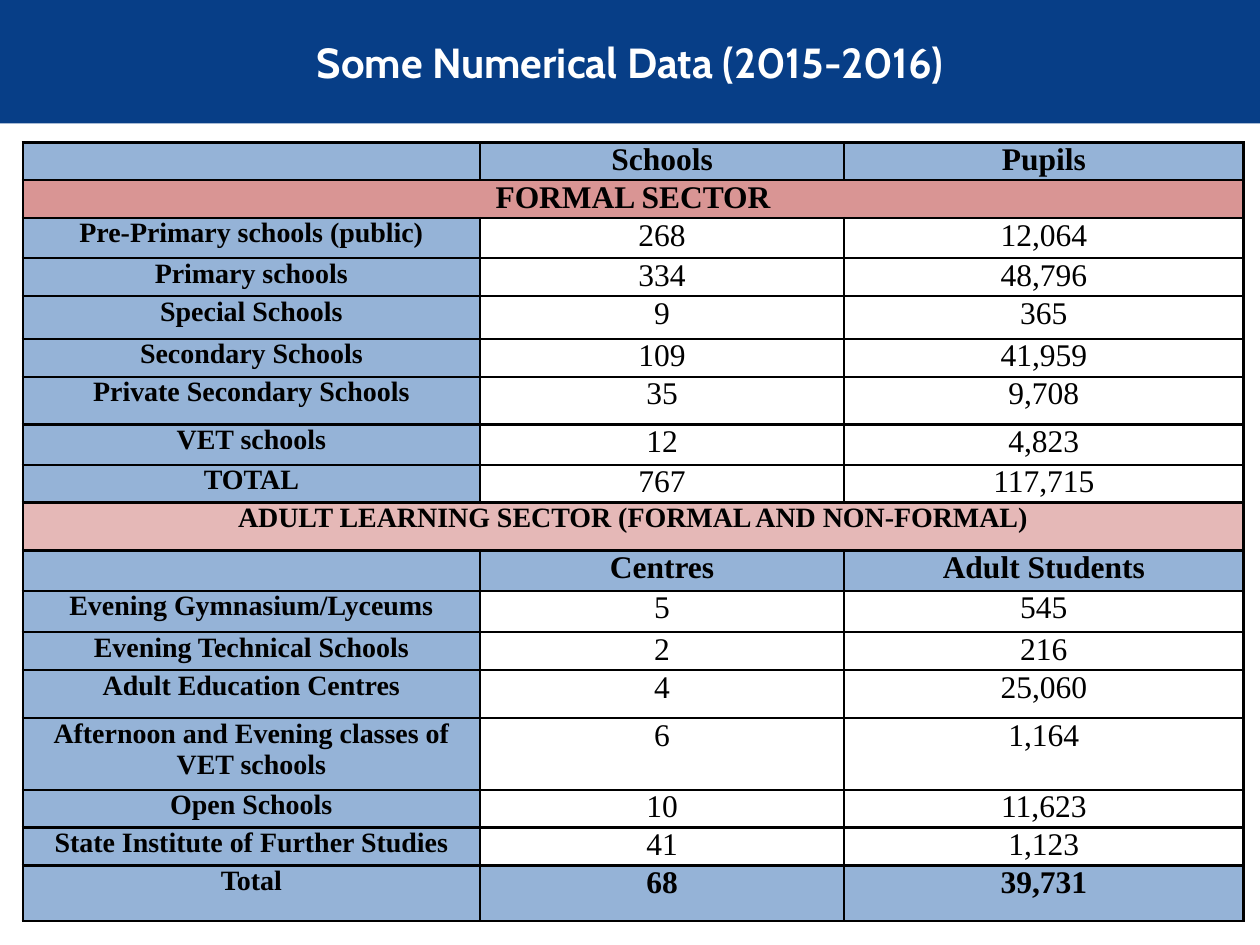
from lxml import etree
from pptx import Presentation
from pptx import util as u
from pptx.dml.color import RGBColor
from pptx.enum import shapes, text
from pptx.oxml.ns import qn

NAVY = RGBColor(0x07, 0x3E, 0x87)
BLUE = RGBColor(0x95, 0xB3, 0xD7)
RED = RGBColor(0xD9, 0x95, 0x94)
PINK = RGBColor(0xE5, 0xB8, 0xB7)
WHITE = RGBColor(0xFF, 0xFF, 0xFF)
BLACK = RGBColor(0, 0, 0)

TITLE = "Some Numerical Data (2015-2016)"

# Kind of row, height in inches, cell texts
ROWS = [
    ("header", 0.3, ["", "Schools", "Pupils"]),
    ("formal", 0.3, ["FORMAL SECTOR"]),
    ("data", 0.32, ["Pre-Primary schools (public)", "268", "12,064"]),
    ("data", 0.3, ["Primary schools", "334", "48,796"]),
    ("data", 0.34, ["Special Schools", "9", "365"]),
    ("data", 0.3, ["Secondary Schools", "109", "41,959"]),
    ("data", 0.38, ["Private Secondary Schools", "35", "9,708"]),
    ("data", 0.32, ["VET schools", "12", "4,823"]),
    ("data", 0.3, ["TOTAL", "767", "117,715"]),
    ("adult", 0.38, ["ADULT LEARNING SECTOR (FORMAL AND NON-FORMAL)"]),
    ("header", 0.32, ["", "Centres", "Adult Students"]),
    ("data", 0.33, ["Evening Gymnasium/Lyceums", "5", "545"]),
    ("data", 0.3, ["Evening Technical Schools", "2", "216"]),
    ("data", 0.38, ["Adult Education Centres", "4", "25,060"]),
    ("data", 0.57, ["Afternoon and Evening classes of VET schools", "6", "1,164"]),
    ("data", 0.3, ["Open Schools", "10", "11,623"]),
    ("data", 0.3, ["State Institute of Further Studies", "41", "1,123"]),
    ("header", 0.44, ["Total", "68", "39,731"]),
]
COLUMN_WIDTHS = [3.63, 2.89, 3.17]

# Kind of row: fill, bold and size of its first cell, then of its other cells
STYLES = {
    "header": ((BLUE, True, 16), (BLUE, True, 18)),
    "data": ((BLUE, True, 16), (WHITE, False, 18)),
    "formal": ((RED, True, 18),) * 2,
    "adult": ((PINK, True, 16),) * 2,
}


def set_font(font, name, size, color, bold):
    font.name, font.size, font.bold = name, u.Pt(size), bold
    font.color.rgb = color


def add_borders(cell):
    properties = cell._tc.get_or_add_tcPr()
    for side in ("lnL", "lnR", "lnT", "lnB"):
        line = etree.SubElement(properties, qn(f"a:{side}"), w=str(u.Pt(1.5)))
        fill = etree.SubElement(line, qn("a:solidFill"))
        etree.SubElement(fill, qn("a:srgbClr"), val=str(BLACK))


def style_cell(cell, fill, bold, size):
    add_borders(cell)
    cell.fill.solid()
    cell.fill.fore_color.rgb = fill
    cell.margin_left = cell.margin_right = u.Inches(0.07)
    cell.margin_top = cell.margin_bottom = 0
    paragraph = cell.text_frame.paragraphs[0]
    paragraph.alignment = text.PP_ALIGN.CENTER
    paragraph.space_after = u.Pt(10)
    if not paragraph.runs:
        paragraph.font.size = u.Pt(size)
    for run in paragraph.runs:
        set_font(run.font, "Times New Roman", size, BLACK, bold)


def add_title(slide, width):
    banner = slide.shapes.add_shape(
        shapes.MSO_SHAPE.RECTANGLE, 0, 0, width, u.Inches(0.98))
    banner.shadow.inherit = False
    banner.fill.solid()
    banner.fill.fore_color.rgb = NAVY
    banner.line.fill.background()
    frame = banner.text_frame
    frame.word_wrap = True
    frame.vertical_anchor = text.MSO_ANCHOR.MIDDLE
    frame.margin_left = frame.margin_right = u.Inches(0.39)
    frame.text = TITLE
    paragraph = frame.paragraphs[0]
    paragraph.alignment = text.PP_ALIGN.CENTER
    set_font(paragraph.runs[0].font, "Cabin", 24, WHITE, True)


def add_numbers(slide):
    heights = [height for _, height, _ in ROWS]
    table = slide.shapes.add_table(
        len(ROWS), len(COLUMN_WIDTHS), u.Inches(0.18), u.Inches(1.13),
        u.Inches(sum(COLUMN_WIDTHS)), u.Inches(sum(heights))).table
    for column, width in zip(table.columns, COLUMN_WIDTHS):
        column.width = u.Inches(width)
    for row, (kind, height, values) in zip(table.rows, ROWS):
        row.height = u.Inches(height)
        cells = list(row.cells)
        for cell, value in zip(cells, values):
            cell.text = value
        for index, cell in enumerate(cells):
            style_cell(cell, *STYLES[kind][min(index, 1)])
        if len(values) == 1:
            cells[0].merge(cells[-1])


def main():
    presentation = Presentation()
    presentation.slide_width = u.Inches(10)
    presentation.slide_height = u.Inches(7.5)
    slide = presentation.slides.add_slide(presentation.slide_layouts[6])
    add_title(slide, presentation.slide_width)
    add_numbers(slide)
    presentation.save("out.pptx")


if __name__ == "__main__":
    main()
